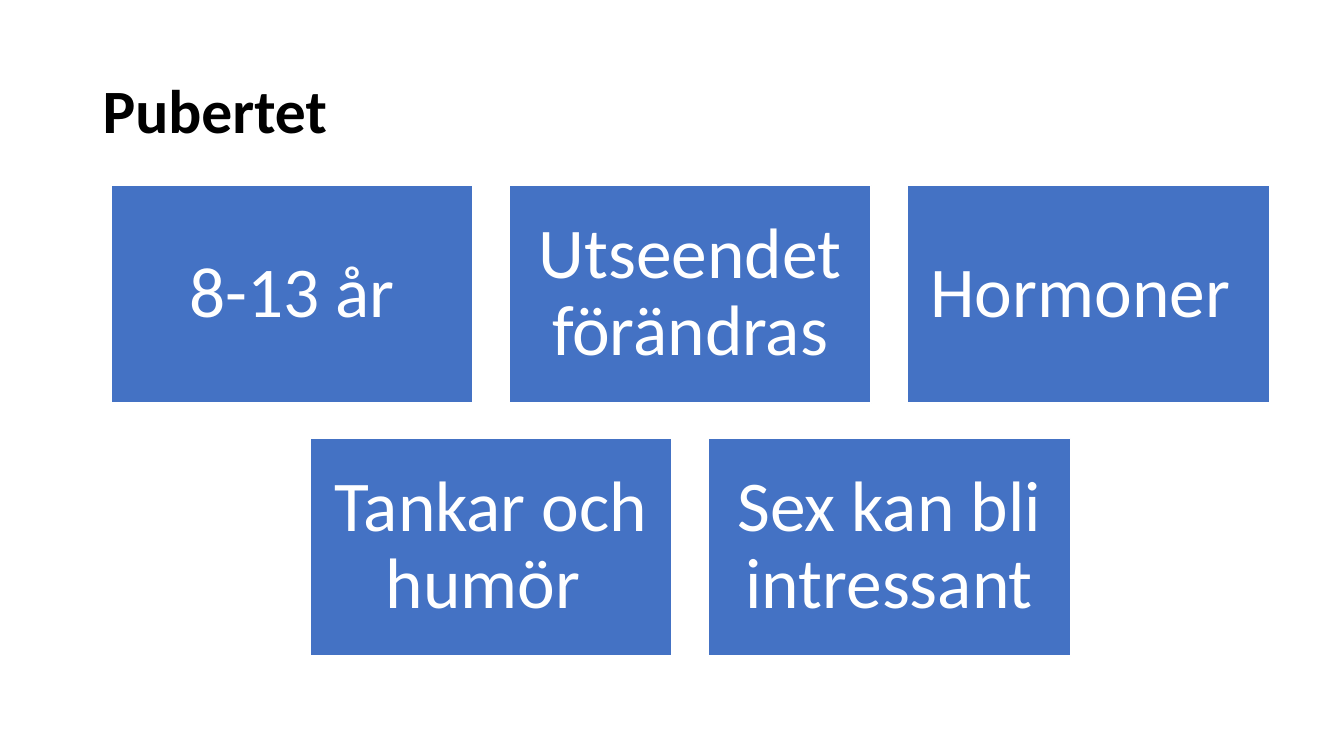
from pptx import Presentation
from pptx.dml.color import RGBColor
from pptx.enum.shapes import MSO_SHAPE
from pptx.enum.text import MSO_ANCHOR, PP_ALIGN
from pptx.util import Inches, Pt

RECT = MSO_SHAPE.RECTANGLE
MIDDLE = MSO_ANCHOR.MIDDLE
LEFT, CENTER = PP_ALIGN.LEFT, PP_ALIGN.CENTER

BLACK = RGBColor(0x00, 0x00, 0x00)
WHITE = RGBColor(0xFF, 0xFF, 0xFF)
BLUE = RGBColor(0x44, 0x72, 0xC4)

TITLE_FONT = {"name": "Calibri", "size": Pt(44), "bold": True}
CARD_FONT = {"name": "Calibri", "size": Pt(51)}

# Card grid in inches: origin, pitch and card size
GRID_LEFT, GRID_TOP = 1.1, 1.84
COL_PITCH, ROW_PITCH = 3.95, 2.51
CARD_W, CARD_H = 3.59, 2.16
GRID_COLS = 3

CARD_ROWS = [
    ["8-13 år", "Utseendet förändras", "Hormoner "],
    ["Tankar och humör ", "Sex kan bli intressant"],
]


class Deck:
    """Holds the presentation, its style and the current slide."""

    def __init__(self):
        self.prs = Presentation()
        self.prs.slide_width, self.prs.slide_height = Inches(13.33), Inches(7.5)
        self.slide = self.prs.slides.add_slide(self.prs.slide_layouts[6])

    def set_text(self, sp, text, font, color, align, inset):
        tf = sp.text_frame
        margins = dict.fromkeys(
            ("margin_left", "margin_top", "margin_right", "margin_bottom"),
            Inches(inset))
        for key, value in {"word_wrap": True, "vertical_anchor": MIDDLE, **margins}.items():
            setattr(tf, key, value)
        p = tf.paragraphs[0]
        p.alignment, p.line_spacing = align, 0.9
        r = p.add_run()
        r.text = text
        for key, value in font.items():
            setattr(r.font, key, value)
        r.font.color.rgb = color

    def title(self, text):
        box = self.slide.shapes.add_textbox(
            Inches(0.92), Inches(0.4), Inches(11.5), Inches(1.45))
        self.set_text(box, text, TITLE_FONT, BLACK, LEFT, 0.1)

    def card(self, col, row, text):
        sp = self.slide.shapes.add_shape(
            RECT,
            Inches(GRID_LEFT + col * COL_PITCH), Inches(GRID_TOP + row * ROW_PITCH),
            Inches(CARD_W), Inches(CARD_H))
        sp.shadow.inherit = False
        sp.fill.solid()
        sp.fill.fore_color.rgb = BLUE
        sp.line.color.rgb = WHITE
        sp.line.width = Pt(1)
        self.set_text(sp, text, CARD_FONT, WHITE, CENTER, 0.21)


def main():
    deck = Deck()

    # Heading
    deck.title("Pubertet")

    # Cards, each row centred on the grid
    for row, texts in enumerate(CARD_ROWS):
        first_col = (GRID_COLS - len(texts)) / 2
        for i, text in enumerate(texts):
            deck.card(first_col + i, row, text)

    deck.prs.save("out.pptx")


if __name__ == "__main__":
    main()
